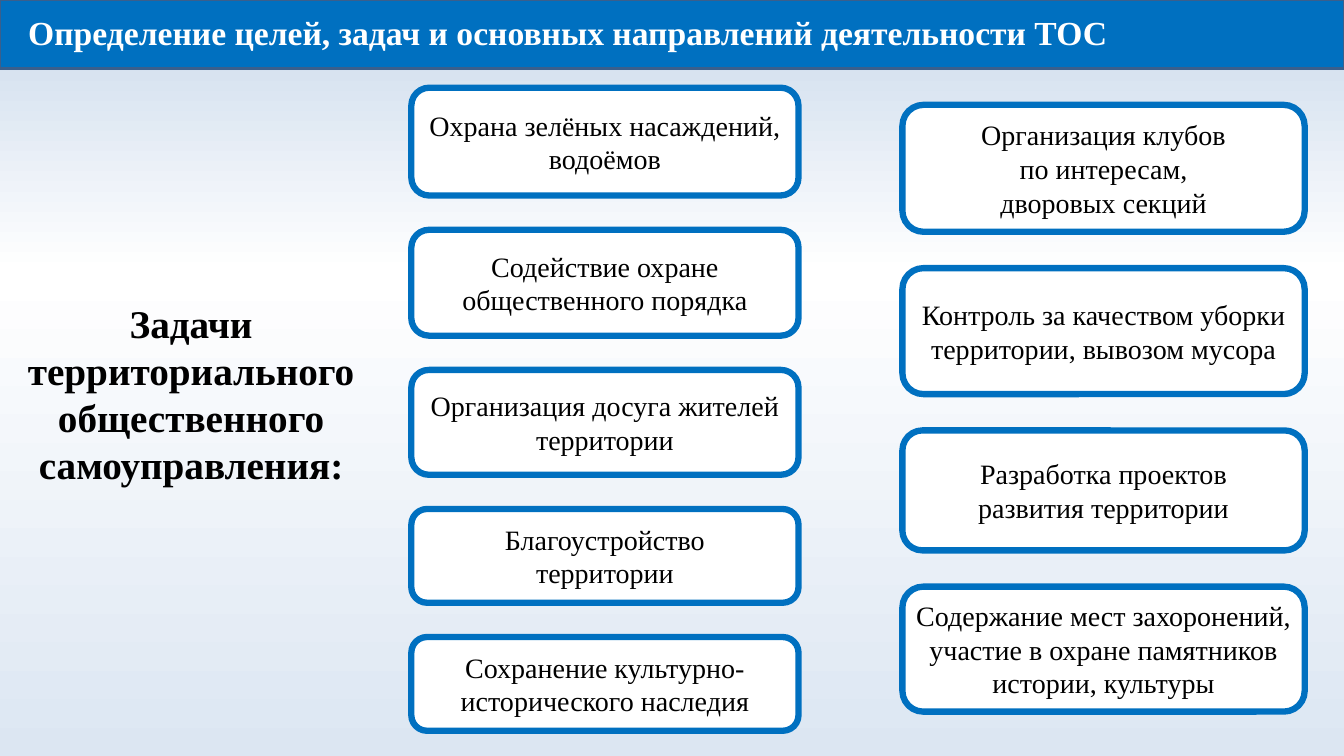
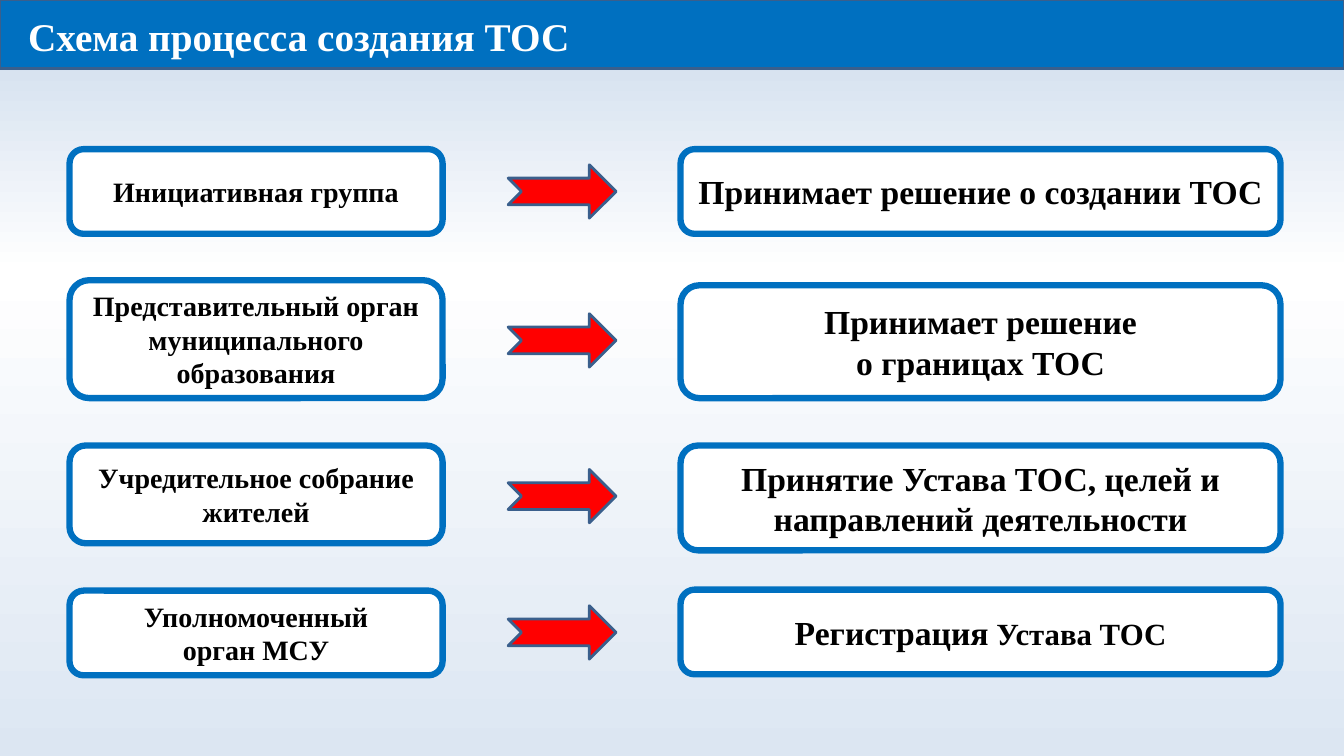
from lxml import etree
from pptx import Presentation
from pptx.dml.color import RGBColor
from pptx.enum.shapes import MSO_SHAPE
from pptx.enum.text import MSO_ANCHOR, MSO_AUTO_SIZE, PP_ALIGN
from pptx.oxml.ns import qn
from pptx.util import Inches, Pt

ROUNDED, ARROW = MSO_SHAPE.ROUNDED_RECTANGLE, MSO_SHAPE.NOTCHED_RIGHT_ARROW
TOP, MIDDLE = MSO_ANCHOR.TOP, MSO_ANCHOR.MIDDLE
LEFT, CENTER = PP_ALIGN.LEFT, PP_ALIGN.CENTER
NO_AUTOSIZE = MSO_AUTO_SIZE.NONE

FONT = "Times New Roman"
BLUE, OUTLINE, RED = "0070C0", "3A5F8C", "FF0000"
WHITE, BLACK = "FFFFFF", "000000"
BACKGROUND_STOPS = [(0, "CAD9EB"), (36, WHITE), (100, "DCE6F2")]
SLIDE_WIDTH, SLIDE_HEIGHT = 13.33, 7.5
BAND_HEIGHT = 0.68
TITLE_ONLY = 5

# Each column: (left, top, width, gap) and its cards as (height, paragraphs)
TASK_COLUMNS = [
    ((4.08, 0.87, 3.84, 0.34), [
        (1.07, ["Охрана зелёных насаждений, водоёмов"]),
        (1.05, ["Содействие охране общественного порядка"]),
        (1.04, ["Организация досуга жителей территории"]),
        (0.93, ["Благоустройство", "территории"]),
        (0.93, ["Сохранение культурно-исторического наследия"]),
    ]),
    ((8.95, 1.04, 3.99, 0.36), [
        (1.26, ["Организация клубов", "по интересам,", "дворовых секций"]),
        (1.25, ["Контроль за качеством уборки территории, вывозом мусора"]),
        (1.19, ["Разработка проектов", "развития территории"]),
        (1.24, ["Содержание мест захоронений, участие в охране памятников "
                "истории, культуры"]),
    ]),
]

# Each step: who (top, height, paragraphs), then what (top, height, paragraphs)
STEPS = [
    ((1.48, 0.84, ["Инициативная группа"]),
     (1.48, 0.84, ["Принимает решение о создании ТОС"])),
    ((2.78, 1.17, ["Представительный орган муниципального образования"]),
     (2.83, 1.12, ["Принимает решение", "о границах ТОС"])),
    ((4.42, 0.97, ["Учредительное собрание жителей"]),
     (4.42, 1.04, ["Принятие Устава ТОС, целей и направлений деятельности"])),
    ((5.86, 0.84, ["Уполномоченный", "орган МСУ"]),
     (5.85, 0.84, [[("Регистрация", 24), (" Устава ТОС", 22)]])),
]
ACTOR_LEFT, ACTOR_WIDTH = 0.69, 3.7
ACTION_LEFT, ACTION_WIDTH = 6.75, 5.95
ARROW_LEFT, ARROW_WIDTH, ARROW_HEIGHT = 5.04, 1.07, 0.53


def rgb(color):
    return RGBColor.from_string(color)


def set_all(target, values):
    for name, value in values.items():
        setattr(target, name, value)


def paint(shape, fill, line, line_width):
    shape.fill.solid()
    shape.fill.fore_color.rgb = rgb(fill)
    shape.line.color.rgb = rgb(line)
    shape.line.width = Pt(line_width)


def write(frame, paragraphs, size, bold=False, color=BLACK, align=CENTER,
          anchor=MIDDLE, margins=(0.03, 0.05, 0.03, 0.05)):
    """Fill a frame; a paragraph is a string or a list of (text, size) runs."""
    left, top, right, bottom = map(Inches, margins)
    set_all(frame, {
        "word_wrap": True, "auto_size": NO_AUTOSIZE, "vertical_anchor": anchor,
        "margin_left": left, "margin_top": top,
        "margin_right": right, "margin_bottom": bottom,
    })
    for index, content in enumerate(paragraphs):
        paragraph = frame.add_paragraph() if index else frame.paragraphs[0]
        paragraph.alignment = align
        runs = [(content, size)] if isinstance(content, str) else content
        for text, run_size in runs:
            run = paragraph.add_run()
            run.text = text
            set_all(run.font, {"name": FONT, "size": Pt(run_size), "bold": bold})
            run.font.color.rgb = rgb(color)


def set_background(master):
    fill = master.background.fill
    fill.gradient()
    fill.gradient_angle = 270
    stops = master.element.find(".//" + qn("a:gsLst"))
    for old_stop in list(stops):
        stops.remove(old_stop)
    for percent, color in BACKGROUND_STOPS:
        stop = etree.SubElement(stops, qn("a:gs"), pos=str(percent * 1000))
        etree.SubElement(stop, qn("a:srgbClr"), val=color)


def add_titled_slide(prs, title, size):
    slide = prs.slides.add_slide(prs.slide_layouts[TITLE_ONLY])
    band = slide.shapes.title
    set_all(band, {"left": 0, "top": 0, "width": Inches(SLIDE_WIDTH),
                   "height": Inches(BAND_HEIGHT)})
    paint(band, BLUE, OUTLINE, 2)
    write(band.text_frame, [title], size, bold=True, color=WHITE, align=LEFT,
          anchor=TOP, margins=(0.28, 0.12, 0.1, 0))
    return slide


def add_figure(slide, preset, box, fill, line, line_width):
    figure = slide.shapes.add_shape(preset, *map(Inches, box))
    figure.shadow.inherit = False
    paint(figure, fill, line, line_width)
    return figure


def add_card(slide, box, paragraphs, size, bold=False):
    card = add_figure(slide, ROUNDED, box, WHITE, BLUE, 4.5)
    write(card.text_frame, paragraphs, size, bold)


def add_task_column(slide, column, cards):
    left, top, width, gap = column
    for height, paragraphs in cards:
        add_card(slide, (left, top, width, height), paragraphs, 20)
        top += height + gap


def add_step(slide, actor, action):
    actor_top, actor_height, actor_text = actor
    action_top, action_height, action_text = action
    add_card(slide, (ACTOR_LEFT, actor_top, ACTOR_WIDTH, actor_height),
             actor_text, 20, bold=True)
    add_card(slide, (ACTION_LEFT, action_top, ACTION_WIDTH, action_height),
             action_text, 24, bold=True)
    middle = (actor_top + actor_height / 2 + action_top + action_height / 2) / 2
    add_figure(slide, ARROW,
               (ARROW_LEFT, middle - ARROW_HEIGHT / 2, ARROW_WIDTH, ARROW_HEIGHT),
               RED, OUTLINE, 2)


def build_tasks_slide(prs):
    slide = add_titled_slide(
        prs, "Определение целей, задач и основных направлений деятельности ТОС", 24)
    heading = slide.shapes.add_textbox(*map(Inches, (0.1, 2.91, 3.59, 1.99)))
    write(heading.text_frame,
          ["Задачи территориального общественного самоуправления:"], 28, bold=True)
    for column, cards in TASK_COLUMNS:
        add_task_column(slide, column, cards)


def build_process_slide(prs):
    slide = add_titled_slide(prs, "Схема процесса создания ТОС", 28)
    for actor, action in STEPS:
        add_step(slide, actor, action)


def main():
    prs = Presentation()
    prs.slide_width, prs.slide_height = Inches(SLIDE_WIDTH), Inches(SLIDE_HEIGHT)
    set_background(prs.slide_master)
    build_tasks_slide(prs)
    build_process_slide(prs)
    prs.save("out.pptx")


if __name__ == "__main__":
    main()
